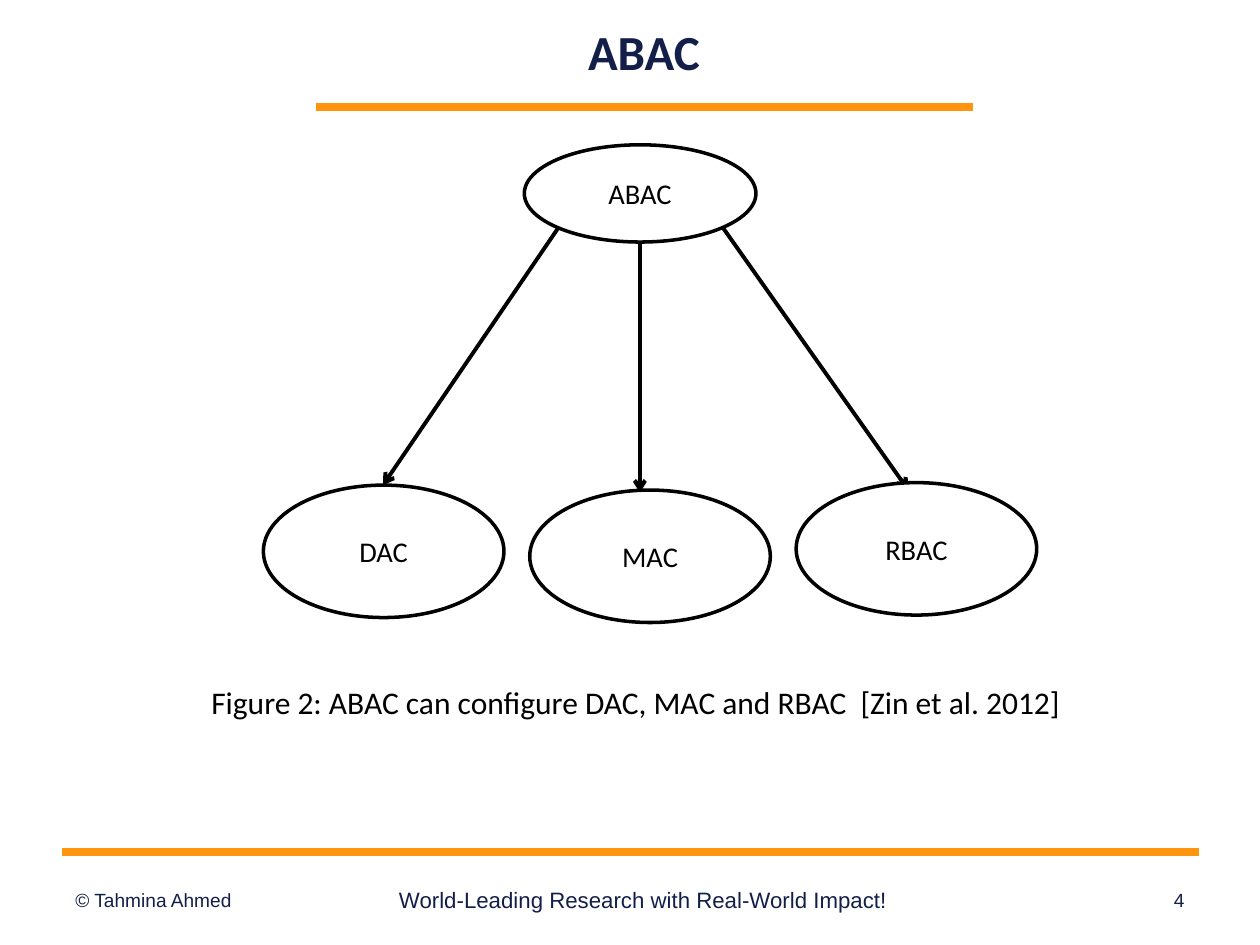
import pptx
import pptx.dml.color
import pptx.enum.shapes
import pptx.enum.text
import pptx.oxml.ns
import pptx.util
import lxml.etree

Cm = pptx.util.Cm
Pt = pptx.util.Pt
Align = pptx.enum.text.PP_ALIGN
Anchor = pptx.enum.text.MSO_ANCHOR

NAVY = pptx.dml.color.RGBColor(0x13, 0x1F, 0x49)
ORANGE = pptx.dml.color.RGBColor(0xFF, 0x95, 0x0E)
BLACK = pptx.dml.color.RGBColor(0, 0, 0)
WHITE = pptx.dml.color.RGBColor(0xFF, 0xFF, 0xFF)


def write_text(shape, text, size=18, font="Calibri", color=BLACK, bold=False,
               align=Align.LEFT, anchor=Anchor.MIDDLE):
    frame = shape.text_frame
    frame.word_wrap = True
    frame.auto_size = pptx.enum.text.MSO_AUTO_SIZE.NONE
    frame.vertical_anchor = anchor
    para = frame.paragraphs[0]
    para.alignment = align
    span = para.add_run()
    span.text = text
    span.font.name = font
    span.font.size = Pt(size)
    span.font.bold = bold
    span.font.color.rgb = color


def add_text(page, left, top, width, height, text, **style):
    box = page.shapes.add_textbox(Cm(left), Cm(top), Cm(width), Cm(height))
    write_text(box, text, **style)


def add_line(page, start, end, color, weight, arrow=False):
    line = page.shapes.add_connector(
        pptx.enum.shapes.MSO_CONNECTOR.STRAIGHT,
        *(Cm(value) for value in (*start, *end)))
    line.line.color.rgb = color
    line.line.width = Pt(weight)
    properties = line._element.spPr
    if arrow:
        outline = properties.find(pptx.oxml.ns.qn("a:ln"))
        lxml.etree.SubElement(outline, pptx.oxml.ns.qn("a:tailEnd"), type="arrow")
    lxml.etree.SubElement(properties, pptx.oxml.ns.qn("a:effectLst"))


def add_node(page, left, top, width, height, text):
    node = page.shapes.add_shape(pptx.enum.shapes.MSO_SHAPE.OVAL,
                                 Cm(left), Cm(top), Cm(width), Cm(height))
    node.shadow.inherit = False
    node.fill.solid()
    node.fill.fore_color.rgb = WHITE
    node.line.color.rgb = BLACK
    node.line.width = Pt(2)
    write_text(node, text, size=16.3, align=Align.CENTER)


def add_header(page, left, top, width, height, text):
    title = page.shapes.title
    title.left, title.top = Cm(left), Cm(top)
    title.width, title.height = Cm(width), Cm(height)
    write_text(title, text, size=28, color=NAVY, bold=True, align=Align.CENTER)
    rule_top = top + height + 0.26
    add_line(page, (left + 0.59, rule_top), (left + width - 0.56, rule_top),
             ORANGE, 4.31)


def add_footer(page, left, top, width, height):
    add_line(page, (left, top), (left + width, top), ORANGE, 4.31)
    # Offset, width, text, size and alignment of each entry
    entries = [
        (0.03, 5.92, "© Tahmina Ahmed", 10.9, Align.LEFT),
        (6.46, 10.52, "World-Leading Research with Real-World Impact!", 12.7,
         Align.CENTER),
        (17.43, 5.46, "4", 10.9, Align.RIGHT),
    ]
    for offset, entry_width, text, size, align in entries:
        add_text(page, left + offset, top + 0.46, entry_width, height - 0.46,
                 text, size=size, font="Arial", color=NAVY, align=align)


def add_tree(page, left, top, width, height):
    add_node(page, left + 5.26, top, 4.67, 1.96, "ABAC")
    # Child name, top offset, arrow start and arrow end
    children = [
        ("DAC", 6.86, (5.94, 1.68), (2.41, 6.86)),
        ("MAC", 6.96, (7.59, 1.96), (7.59, 7.01)),
        ("RBAC", 6.81, (9.27, 1.68), (13.0, 6.96)),
    ]
    child_width, child_height = 4.85, height - 6.96
    pitch = (width - child_width) / (len(children) - 1)
    for index, (name, offset, start, end) in enumerate(children):
        add_line(page, (left + start[0], top + start[1]),
                 (left + end[0], top + end[1]), BLACK, 2.25, arrow=True)
        add_node(page, left + index * pitch, top + offset,
                 child_width, child_height, name)


def main():
    deck = pptx.Presentation()
    deck.slide_width, deck.slide_height = Cm(25.4), Cm(19.05)
    page = deck.slides.add_slide(deck.slide_layouts.get_by_name("Title Only"))
    page.background.fill.solid()
    page.background.fill.fore_color.rgb = WHITE

    add_header(page, 5.79, 0.15, 14.38, 1.75, "ABAC")
    add_footer(page, 1.24, 17.17, 22.94, 1.48)
    add_tree(page, 5.31, 2.92, 15.59, 9.63)
    # Figure caption
    add_text(page, 4.01, 13.64, 19.3, 1.02,
             "Figure 2: ABAC can configure DAC, MAC and RBAC  [Zin et al. 2012]",
             anchor=Anchor.TOP)
    deck.save("out.pptx")


if __name__ == "__main__":
    main()
